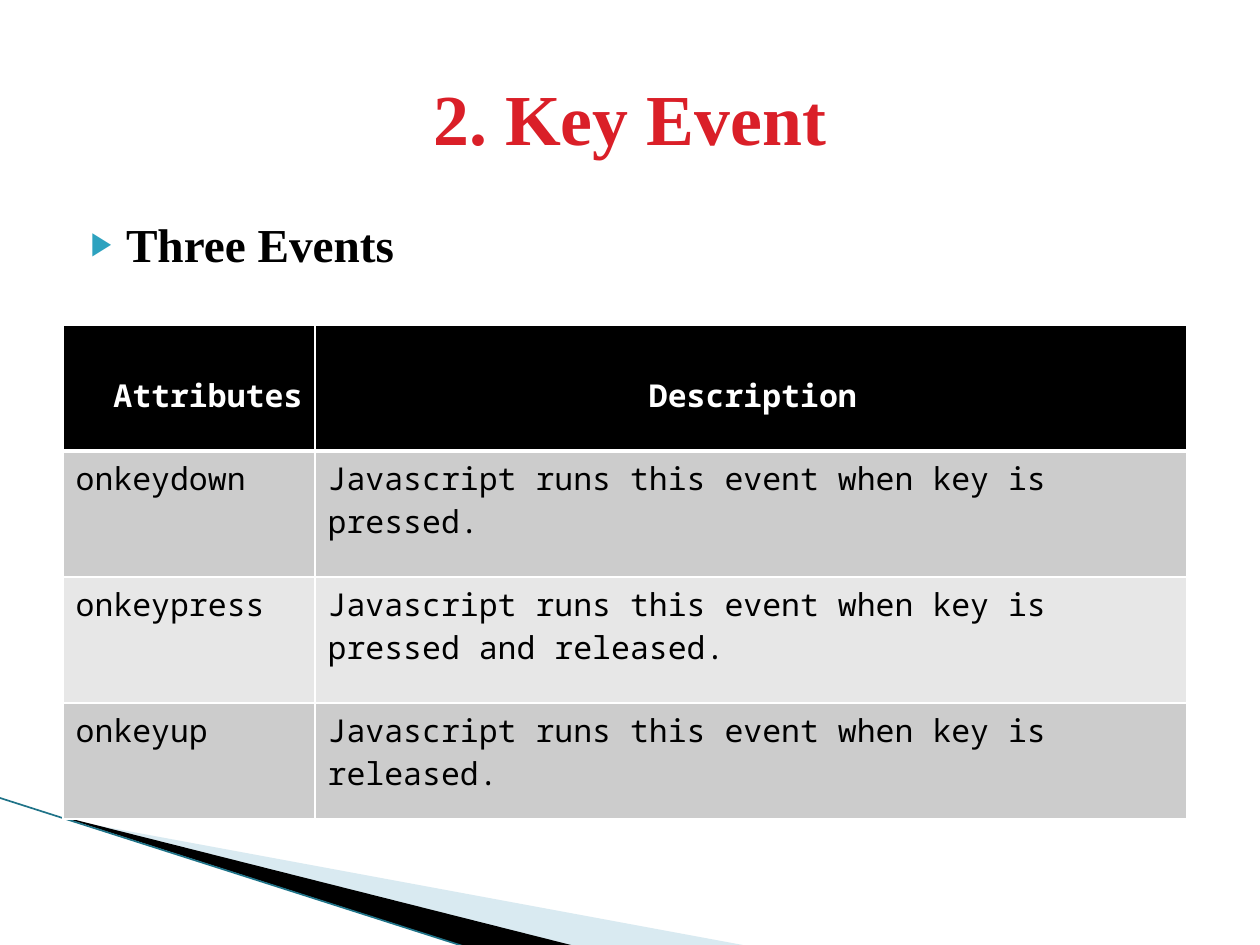
"""Build the key event slide with its attribute table and corner wedges."""
from dataclasses import dataclass

import pptx
import pptx.dml.color
import pptx.enum.shapes
import pptx.enum.text
import pptx.oxml
import pptx.oxml.ns
import pptx.util
from pptx.util import Inches

SERIF = "Times New Roman"
MONO = "Noto Sans Mono"
DRAWING_NS = pptx.oxml.ns.nsdecls("a")


@dataclass(frozen=True)
class Wedge:
    """A filled corner outline, in inches."""
    points: tuple[tuple[float, float], ...]
    color: str
    alpha: int = 100


@dataclass(frozen=True)
class EventRow:
    """One table row with its height and look."""
    texts: tuple[str, str]
    height: float
    fill: str
    header: bool = False


WEDGES = (
    Wedge(((0.55, 6.51), (5.95, 7.51), (4.56, 7.51), (0.55, 6.5)), "A0CBDC", 40),
    Wedge(((0.53, 6.49), (4.57, 7.51), (3.72, 7.52), (0.54, 6.5)), "000000"),
)
COLUMN_WIDTHS = (2, 6.92)
HEADER_INDENTS = (0.4, 2.65)
EVENT_ROWS = (
    EventRow(("Attributes", "Description"), 1, "000000", True),
    EventRow(("onkeydown", "Javascript runs this event when key is pressed."), 1, "CCCCCC"),
    EventRow(("onkeypress", "Javascript runs this event when key is pressed and released."),
             1, "E7E7E7"),
    EventRow(("onkeyup", "Javascript runs this event when key is released."), 0.92, "CCCCCC"),
)


def rgb(value: str) -> pptx.dml.color.RGBColor:
    """Turn a hex string into a colour."""
    return pptx.dml.color.RGBColor.from_string(value)


def add_run(paragraph, text: str, font: str, size: float, color: str, bold: bool) -> None:
    """Append one formatted run."""
    run = paragraph.add_run()
    run.text = text
    run.font.name = font
    run.font.size = pptx.util.Pt(size)
    run.font.bold = bold
    run.font.color.rgb = rgb(color)


def place(shape, left: float, top: float, width: float, height: float) -> None:
    """Set a shape's position and size in inches."""
    shape.left, shape.top = Inches(left), Inches(top)
    shape.width, shape.height = Inches(width), Inches(height)


def draw_wedge(shapes, wedge: Wedge) -> None:
    """Draw one borderless wedge."""
    start, *others = [(Inches(x), Inches(y)) for x, y in wedge.points]
    builder = shapes.build_freeform(*start)
    builder.add_line_segments(others)
    outline = builder.convert_to_shape()
    outline.shadow.inherit = False
    outline.line.fill.background()
    outline.fill.solid()
    outline.fill.fore_color.rgb = rgb(wedge.color)
    if wedge.alpha < 100:
        color = outline.fill._xPr.find(".//" + pptx.oxml.ns.qn("a:srgbClr"))
        color.append(pptx.oxml.parse_xml(f'<a:alpha {DRAWING_NS} val="{wedge.alpha * 1000}"/>'))


def draw_edge(shapes) -> None:
    """Draw the thin line along the wedges."""
    edge = shapes.add_connector(pptx.enum.shapes.MSO_CONNECTOR.STRAIGHT,
                                Inches(-0.01), Inches(6.33), Inches(3.71), Inches(7.52))
    edge.line.color.rgb = rgb("1F7388")
    edge.line.width = pptx.util.Pt(0.95)
    edge._element.spPr.append(pptx.oxml.parse_xml(f"<a:effectLst {DRAWING_NS}/>"))


def fill_title(title) -> None:
    """Place and write the heading."""
    place(title, 0.5, 0.3, 9, 1.25)
    title.text_frame.vertical_anchor = pptx.enum.text.MSO_ANCHOR.MIDDLE
    heading = title.text_frame.paragraphs[0]
    heading.alignment = pptx.enum.text.PP_ALIGN.CENTER
    add_run(heading, "2. Key Event", SERIF, 41, "DA1F28", True)


def fill_body(body) -> None:
    """Place and write the bulleted line."""
    place(body, 0.5, 1.62, 9, 4.95)
    body.text_frame.margin_top = Inches(0.09)
    lead = body.text_frame.paragraphs[0]
    properties = lead._p.get_or_add_pPr()
    properties.set("marL", str(Inches(0.4)))
    properties.set("indent", str(Inches(-0.28)))
    for bullet in ('<a:buClr {}><a:srgbClr val="2DA2BF"/></a:buClr>',
                   '<a:buSzPct {} val="68000"/>', '<a:buChar {} char="▶"/>'):
        properties.append(pptx.oxml.parse_xml(bullet.format(DRAWING_NS)))
    lead.space_before = pptx.util.Pt(0)
    add_run(lead, "Three Events", SERIF, 27, "000000", True)


def set_borders(cell, top: float, bottom: float) -> None:
    """Give a cell white borders, with widths in points."""
    properties = cell._tc.get_or_add_tcPr()
    for side, width in (("L", 1), ("R", 1), ("T", top), ("B", bottom)):
        properties.append(pptx.oxml.parse_xml(
            f'<a:ln{side} {DRAWING_NS} w="{pptx.util.Pt(width)}"><a:solidFill>'
            f'<a:srgbClr val="FFFFFF"/></a:solidFill></a:ln{side}>'))


def draw_events(shapes) -> None:
    """Draw the table of key events."""
    heights = [row.height for row in EVENT_ROWS]
    events = shapes.add_table(len(EVENT_ROWS), len(COLUMN_WIDTHS), Inches(0.5), Inches(2.58),
                              Inches(sum(COLUMN_WIDTHS)), Inches(sum(heights))).table
    for column, width in zip(events.columns, COLUMN_WIDTHS):
        column.width = Inches(width)
    for index, row in enumerate(EVENT_ROWS):
        events.rows[index].height = Inches(row.height)
        for column, text in enumerate(row.texts):
            cell = events.cell(index, column)
            set_borders(cell, 3 if index == 1 else 1, 3 if row.header else 1)
            cell.fill.solid()
            cell.fill.fore_color.rgb = rgb(row.fill)
            if row.header:
                cell.margin_left = Inches(HEADER_INDENTS[column])
                cell.margin_right = Inches(0.05)
                cell.margin_top = Inches(0.39)
            add_run(cell.text_frame.paragraphs[0], text, MONO, 18,
                    "FFFFFF" if row.header else "000000", row.header)


def main() -> None:
    """Build and save the slide."""
    deck = pptx.Presentation()
    deck.slide_width, deck.slide_height = Inches(10), Inches(7.5)
    slide = deck.slides.add_slide(deck.slide_layouts[1])
    for wedge in WEDGES:
        draw_wedge(slide.shapes, wedge)
    draw_edge(slide.shapes)
    fill_body(slide.placeholders[1])
    fill_title(slide.shapes.title)
    draw_events(slide.shapes)
    deck.save("out.pptx")


if __name__ == "__main__":
    main()
